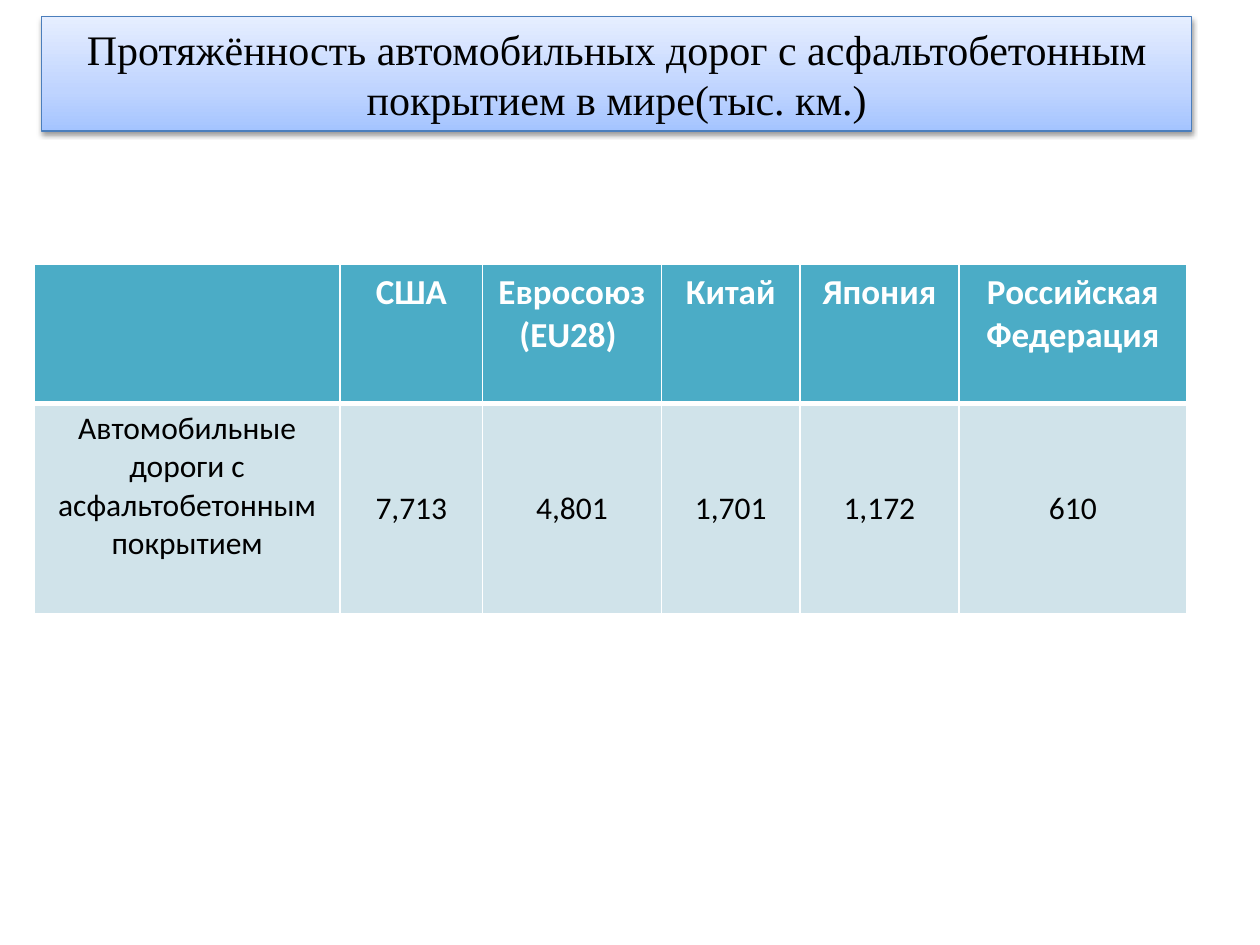
from copy import deepcopy

from lxml import etree
from pptx import Presentation
from pptx.dml.color import RGBColor
from pptx.enum import shapes, text
from pptx.oxml import parse_xml
from pptx.oxml.ns import nsdecls, qn
from pptx.util import Inches, Pt

BLACK = RGBColor(0x00, 0x00, 0x00)
WHITE = RGBColor(0xFF, 0xFF, 0xFF)
TITLE_LINE = RGBColor(0x4B, 0x7E, 0xBC)
TITLE_STOPS = [
    (0, RGBColor(0xA4, 0xC4, 0xFF)),
    (0.35, RGBColor(0xBF, 0xD4, 0xFF)),
    (1, RGBColor(0xE6, 0xEE, 0xFF)),
]
HEADER_FILL = RGBColor(0x4B, 0xAC, 0xC6)
BODY_FILL = RGBColor(0xD0, 0xE3, 0xEA)

TITLE = "Протяжённость автомобильных дорог с асфальтобетонным покрытием в мире(тыс. км.)"
HEADER = [[], ["США"], ["Евросоюз", "(EU28) "], ["Китай"], ["Япония"], ["Российская Федерация"]]
LENGTHS = [["Автомобильные дороги с асфальтобетонным покрытием"],
           ["7,713"], ["4,801"], ["1,701"], ["1,172"], ["610"]]
COLUMN_WIDTHS = [2.43, 1.13, 1.42, 1.1, 1.26, 1.81]
ROW_HEIGHTS = [1.1, 1.67]


def write_lines(frame, lines, font_name, size, color, bold=False):
    """Write each line as a centred paragraph."""
    for index, line in enumerate(lines):
        paragraph = frame.add_paragraph() if index else frame.paragraphs[0]
        paragraph.alignment = text.PP_ALIGN.CENTER
        run = paragraph.add_run()
        run.text = line
        run.font.name = font_name
        run.font.size = Pt(size)
        run.font.bold = bold
        run.font.color.rgb = color


def fill_gradient(shape, stops):
    """Fill a shape with a gradient that rises from the bottom."""
    shape.fill.gradient()
    shape.fill.gradient_angle = 90
    stop_list = shape._element.spPr.find(qn("a:gradFill")).find(qn("a:gsLst"))
    while len(stop_list) < len(stops):
        stop_list.append(deepcopy(stop_list[0]))
    for stop, (position, color) in zip(shape.fill.gradient_stops, stops):
        stop.position = position
        stop.color.rgb = color


def add_shadow(shape):
    """Give a shape a soft shadow below it."""
    shape.shadow.inherit = False
    effects = shape._element.spPr.find(qn("a:effectLst"))
    effects.append(parse_xml(
        f'<a:outerShdw {nsdecls("a")} blurRad="{Pt(3.1)}" dist="{Pt(1.6)}" '
        'dir="5400000" rotWithShape="0"><a:srgbClr val="000000">'
        '<a:alpha val="38000"/></a:srgbClr></a:outerShdw>'))


def add_title(slide):
    """Add the title bar."""
    shape = slide.shapes.add_shape(
        shapes.MSO_SHAPE.RECTANGLE, Inches(0.33), Inches(0.13), Inches(9.13), Inches(0.91))
    fill_gradient(shape, TITLE_STOPS)
    shape.line.color.rgb = TITLE_LINE
    shape.line.width = Pt(0.75)
    add_shadow(shape)
    frame = shape.text_frame
    frame.word_wrap = True
    write_lines(frame, [TITLE], "Times New Roman", 24, BLACK)


def set_borders(cell, widths):
    """Draw white borders with the given widths by side."""
    properties = cell._tc.get_or_add_tcPr()
    for side, width in widths.items():
        line = etree.SubElement(properties, qn(f"a:ln{side}"), w=str(Pt(width)))
        solid = etree.SubElement(line, qn("a:solidFill"))
        etree.SubElement(solid, qn("a:srgbClr"), val=str(WHITE))


def add_roads_table(slide):
    """Add the table of road lengths by country."""
    frame = slide.shapes.add_table(
        len(ROW_HEIGHTS), len(COLUMN_WIDTHS), Inches(0.27), Inches(2.1),
        Inches(sum(COLUMN_WIDTHS)), Inches(sum(ROW_HEIGHTS)))
    table = frame.table
    for column, width in zip(table.columns, COLUMN_WIDTHS):
        column.width = Inches(width)
    for row, height in zip(table.rows, ROW_HEIGHTS):
        row.height = Inches(height)

    styles = [
        (HEADER, HEADER_FILL, 20, WHITE, True, {"L": 1, "R": 1, "T": 1, "B": 3}),
        (LENGTHS, BODY_FILL, 18, BLACK, False, {"L": 1, "R": 1, "T": 3, "B": 1}),
    ]
    for row, (contents, fill, size, color, bold, borders) in zip(table.rows, styles):
        for index, (cell, lines) in enumerate(zip(row.cells, contents)):
            set_borders(cell, borders)
            cell.fill.solid()
            cell.fill.fore_color.rgb = fill
            is_value = contents is LENGTHS and index > 0
            cell.vertical_anchor = text.MSO_ANCHOR.MIDDLE if is_value else text.MSO_ANCHOR.TOP
            write_lines(cell.text_frame, lines, "Calibri", size, color, bold)


def main():
    """Build and save the presentation."""
    presentation = Presentation()
    presentation.slide_width = Inches(10)
    presentation.slide_height = Inches(7.5)
    slide = presentation.slides.add_slide(presentation.slide_layouts[6])
    add_title(slide)
    add_roads_table(slide)
    presentation.save("out.pptx")


if __name__ == "__main__":
    main()
